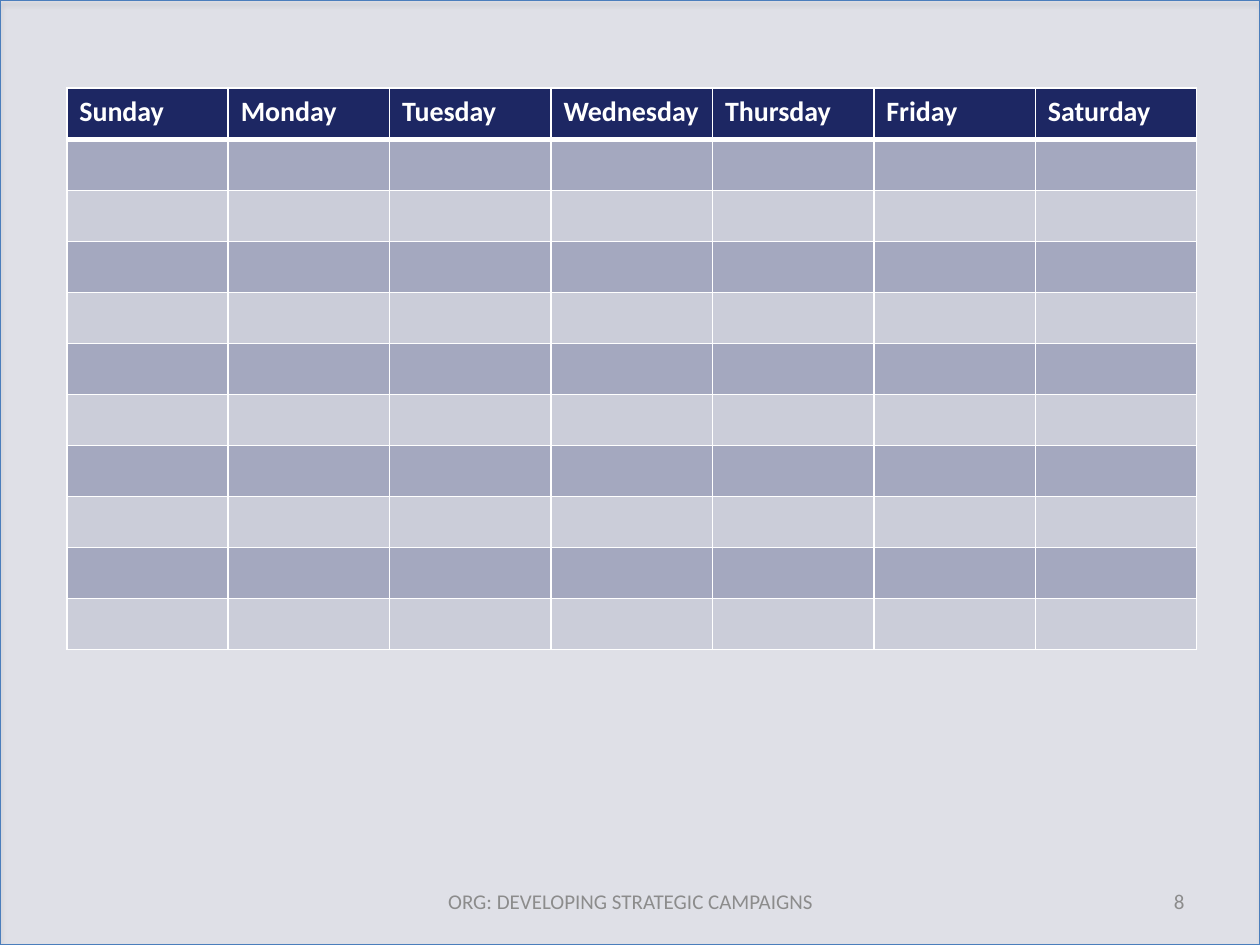
from dataclasses import dataclass

from lxml.etree import SubElement
from pptx import Presentation
from pptx.dml.color import RGBColor
from pptx.enum.shapes import MSO_SHAPE
from pptx.enum.text import MSO_ANCHOR, PP_ALIGN
from pptx.oxml.ns import qn
from pptx.util import Inches, Pt


@dataclass(frozen=True)
class Theme:
    """Colours, font and type sizes of the deck."""
    navy: str = "1D2763"
    frame: str = "4B7EBC"
    white: str = "FFFFFF"
    black: str = "000000"
    grey: str = "8C8C8C"
    font: str = "Calibri"
    header_size: int = 16
    footer_size: int = 12


THEME = Theme()
DAYS = ["Sunday", "Monday", "Tuesday", "Wednesday", "Thursday", "Friday", "Saturday"]
WEEK_ROWS = 10


def add_color(parent, color, percent=100):
    """Append a colour with an opacity to an XML element."""
    node = SubElement(parent, qn("a:srgbClr"), val=color)
    SubElement(node, qn("a:alpha"), val=str(percent * 1000))


def set_fill(fill, color, percent=100):
    """Give a solid fill a colour and an opacity."""
    fill.solid()
    fill.fore_color.rgb = RGBColor.from_string(color)
    node = fill.fore_color._xFill.find(qn("a:srgbClr"))
    SubElement(node, qn("a:alpha"), val=str(percent * 1000))


def style_text(para, size, color, bold=False):
    """Format every run of a paragraph."""
    for span in para.runs:
        span.font.name = THEME.font
        span.font.size = Pt(size)
        span.font.bold = bold
        span.font.color.rgb = RGBColor.from_string(color)


def add_backdrop(page, left, top, width, height):
    """Place the tinted, framed panel with its soft shadow."""
    panel = page.shapes.add_shape(
        MSO_SHAPE.RECTANGLE, Inches(left), Inches(top), Inches(width), Inches(height))
    set_fill(panel.fill, THEME.navy, 10)
    panel.line.color.rgb = RGBColor.from_string(THEME.frame)
    panel.line.width = Pt(0.75)
    panel.shadow.inherit = False
    effects = panel._element.spPr.find(qn("a:effectLst"))
    shadow = SubElement(effects, qn("a:outerShdw"), blurRad=str(Pt(3.1)),
                        dist=str(Pt(1.8)), dir="5400000", rotWithShape="0")
    add_color(shadow, THEME.black, 35)


def add_footer(page, text, align, left, top, width, height):
    """Place one line of footer text."""
    box = page.shapes.add_textbox(Inches(left), Inches(top), Inches(width), Inches(height))
    frame = box.text_frame
    frame.word_wrap = True
    frame.vertical_anchor = MSO_ANCHOR.MIDDLE
    frame.text = text
    para = frame.paragraphs[0]
    para.alignment = align
    style_text(para, THEME.footer_size, THEME.grey)


def set_borders(cell, top=1, bottom=1):
    """Draw white borders around a cell."""
    properties = cell._tc.get_or_add_tcPr()
    for side, width in (("L", 1), ("R", 1), ("T", top), ("B", bottom)):
        line = SubElement(properties, qn(f"a:ln{side}"), w=str(Pt(width)))
        add_color(SubElement(line, qn("a:solidFill")), THEME.white)


def add_calendar(page, left, top, width, height):
    """Place the weekday table with its banded empty rows."""
    table = page.shapes.add_table(
        WEEK_ROWS + 1, len(DAYS),
        Inches(left), Inches(top), Inches(width), Inches(height)).table
    for column, day in enumerate(DAYS):
        header = table.cell(0, column)
        header.text_frame.text = day
        style_text(header.text_frame.paragraphs[0], THEME.header_size, THEME.white, True)
        set_borders(header, bottom=3)
        set_fill(header.fill, THEME.navy)
        for row in range(1, WEEK_ROWS + 1):
            cell = table.cell(row, column)
            set_borders(cell, top=3 if row == 1 else 1)
            set_fill(cell.fill, THEME.navy, 30 if row % 2 else 10)


def main():
    """Build the calendar slide and save it."""
    deck = Presentation()
    deck.slide_width, deck.slide_height = Inches(10), Inches(7.5)
    page = deck.slides.add_slide(deck.slide_layouts[6])
    add_backdrop(page, 0, 0, 10, 7.5)
    add_footer(page, "ORG: DEVELOPING STRATEGIC CAMPAIGNS", PP_ALIGN.CENTER,
               3.42, 6.95, 3.17, 0.4)
    add_footer(page, "8", PP_ALIGN.RIGHT, 7.17, 6.95, 2.33, 0.4)
    add_calendar(page, 0.53, 0.7, 8.97, 4.46)
    deck.save("out.pptx")


if __name__ == "__main__":
    main()
